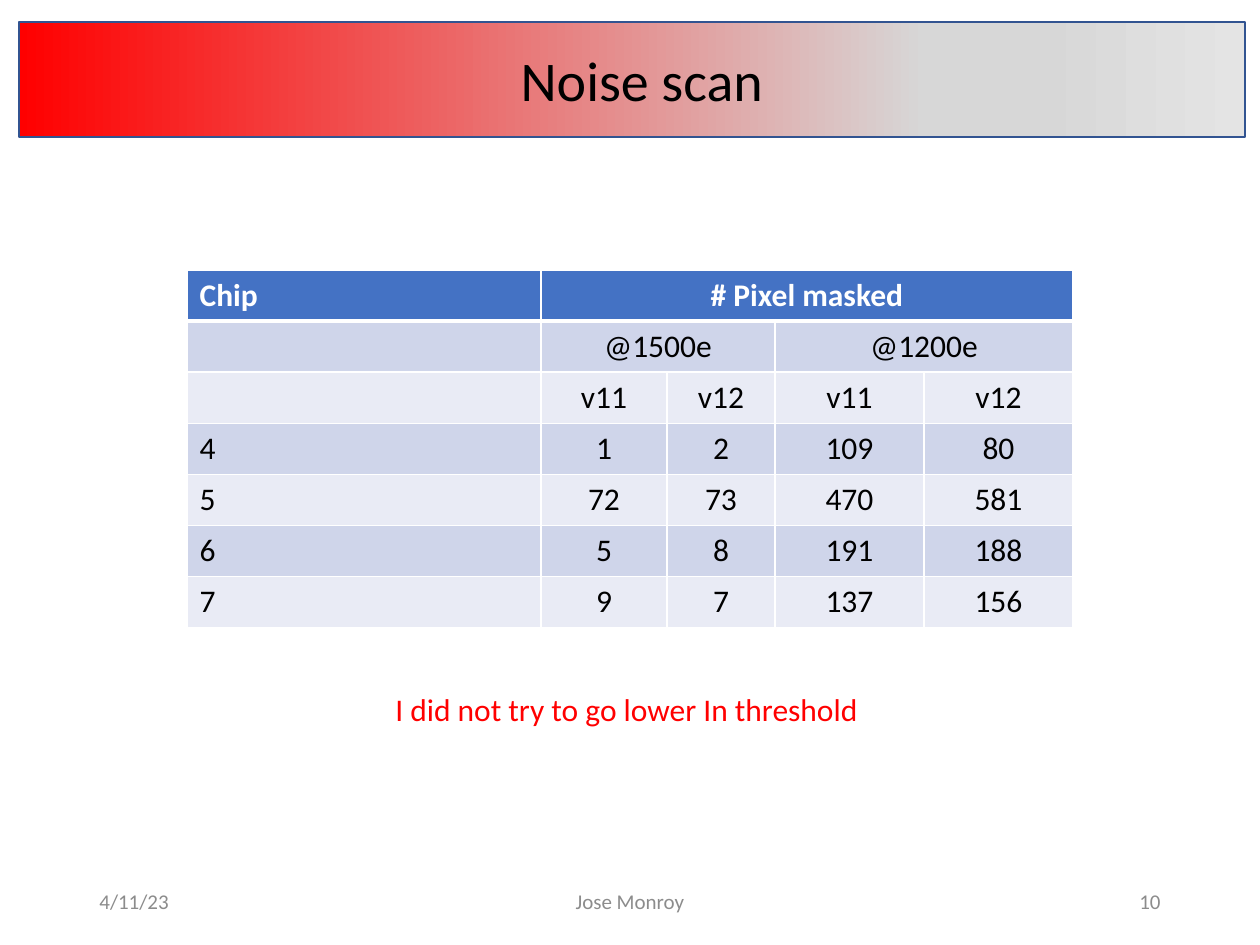
from typing import NamedTuple

from lxml import etree
from pptx import Presentation
from pptx import util as u
from pptx.dml.color import RGBColor
from pptx.enum import shapes, text
from pptx.oxml import ns

PX_PER_INCH = 126
FONT = "Calibri"
BLACK = RGBColor(0x00, 0x00, 0x00)
WHITE = RGBColor(0xFF, 0xFF, 0xFF)
RED = RGBColor(0xFF, 0x00, 0x00)
GRAY = RGBColor(0x8C, 0x8C, 0x8C)
NAVY = RGBColor(0x32, 0x54, 0x91)
HEADER_BLUE = RGBColor(0x44, 0x72, 0xC4)
BAND_DARK = RGBColor(0xCF, 0xD5, 0xEA)
BAND_LIGHT = RGBColor(0xE9, 0xEB, 0xF5)
SILVER = RGBColor(0xD7, 0xD7, 0xD7)
PALE = RGBColor(0xE4, 0xE4, 0xE4)
BANNER_STOPS = [(0, RED), (74, SILVER), (83, SILVER), (100, PALE)]

LEFT, CENTER, RIGHT = (text.PP_ALIGN.LEFT, text.PP_ALIGN.CENTER,
                       text.PP_ALIGN.RIGHT)


class Box(NamedTuple):
    left: int
    top: int
    width: int
    height: int


class Label(NamedTuple):
    words: str
    box: Box
    size: int
    color: RGBColor
    align: text.PP_ALIGN = LEFT
    anchor: text.MSO_ANCHOR = text.MSO_ANCHOR.TOP
    wrap: bool = False


COLUMNS = [354, 126, 108, 149, 149]
ROW_HEIGHT = 51
ROWS = [
    ["Chip", "# Pixel masked", "", "", ""],
    ["", "@1500e", "", "@1200e", ""],
    ["", "v11", "v12", "v11", "v12"],
    ["4", "1", "2", "109", "80"],
    ["5", "72", "73", "470", "581"],
    ["6", "5", "8", "191", "188"],
    ["7", "9", "7", "137", "156"],
]
MERGES = [(0, 1, 4), (1, 1, 2), (1, 3, 4)]  # row, first column, last column

TITLE = Label("Noise scan", Box(508, 39, 269, 81), 32, BLACK)
REMARK = Label("I did not try to go lower In threshold",
               Box(383, 684, 494, 51), 18, RED)
FOOTERS = [
    Label(words, Box(left, 876, width, 50), 12, GRAY, align,
          text.MSO_ANCHOR.MIDDLE, True)
    for words, left, width, align in [("4/11/23", 87, 284, LEFT),
                                      ("Jose Monroy", 417, 426, CENTER),
                                      ("10", 890, 283, RIGHT)]
]


def px(length: int) -> u.Emu:
    return u.Emu(round(length * u.Inches(1) / PX_PER_INCH))


def emu(box: Box) -> list[u.Emu]:
    return [px(length) for length in box]


def write(frame, words: str, *, size: int, color: RGBColor,
          align=LEFT, bold: bool = False) -> None:
    paragraph = frame.paragraphs[0]
    paragraph.alignment = align
    run = paragraph.add_run()
    run.text = words
    run.font.name, run.font.size, run.font.bold = FONT, u.Pt(size), bold
    run.font.color.rgb = color


def fill_label(shape, label: Label) -> None:
    shape.left, shape.top, shape.width, shape.height = emu(label.box)
    frame = shape.text_frame
    frame.word_wrap = label.wrap
    frame.vertical_anchor = label.anchor
    write(frame, label.words, size=label.size, color=label.color,
          align=label.align)


def draw_label(slide, label: Label) -> None:
    fill_label(slide.shapes.add_textbox(*emu(label.box)), label)


def draw_banner(slide, box: Box) -> None:
    banner = slide.shapes.add_shape(shapes.MSO_SHAPE.RECTANGLE, *emu(box))
    banner.shadow.inherit = False
    banner.line.color.rgb = NAVY
    banner.line.width = u.Pt(1)
    banner.fill.gradient()
    banner.fill.gradient_angle = 0
    stops = banner.element.spPr.find(".//" + ns.qn("a:gsLst"))
    for stop in list(stops):
        stops.remove(stop)
    for percent, color in BANNER_STOPS:
        stop = etree.SubElement(stops, ns.qn("a:gs"), pos=str(percent * 1000))
        etree.SubElement(stop, ns.qn("a:srgbClr"), val=str(color))


def set_borders(cell, **points: int) -> None:
    properties = cell._tc.get_or_add_tcPr()
    for side, width in points.items():
        line = etree.SubElement(properties, ns.qn(f"a:ln{side}"),
                                w=str(u.Pt(width)))
        solid = etree.SubElement(line, ns.qn("a:solidFill"))
        etree.SubElement(solid, ns.qn("a:srgbClr"), val=str(WHITE))


def draw_mask_table(slide, left: int, top: int) -> None:
    box = Box(left, top, sum(COLUMNS), ROW_HEIGHT * len(ROWS))
    table = slide.shapes.add_table(len(ROWS), len(COLUMNS), *emu(box)).table
    for column, width in zip(table.columns, COLUMNS):
        column.width = px(width)
    for r, values in enumerate(ROWS):
        table.rows[r].height = px(ROW_HEIGHT)
        header = r == 0
        band = BAND_DARK if r % 2 else BAND_LIGHT
        for c, value in enumerate(values):
            cell = table.cell(r, c)
            # A thick rule separates the header from the body
            set_borders(cell, L=1, R=1, T=3 if r == 1 else 1,
                        B=3 if header else 1)
            cell.fill.solid()
            cell.fill.fore_color.rgb = HEADER_BLUE if header else band
            if value:
                write(cell.text_frame, value, size=18, bold=header,
                      color=WHITE if header else BLACK,
                      align=CENTER if c else LEFT)
    for row, first, last in MERGES:
        table.cell(row, first).merge(table.cell(row, last))


def main() -> None:
    deck = Presentation()
    deck.slide_width, deck.slide_height = u.Inches(10), u.Inches(7.5)
    slide = deck.slides.add_slide(deck.slide_layouts[5])

    # Banner, with the title brought in front of it
    draw_banner(slide, Box(19, 22, 1226, 115))
    title = slide.shapes.title
    fill_label(title, TITLE)
    title.element.getparent().append(title.element)

    # Results and remark
    draw_mask_table(slide, 187, 270)
    draw_label(slide, REMARK)

    # Footer
    for footer in FOOTERS:
        draw_label(slide, footer)

    deck.save("out.pptx")


if __name__ == "__main__":
    main()
